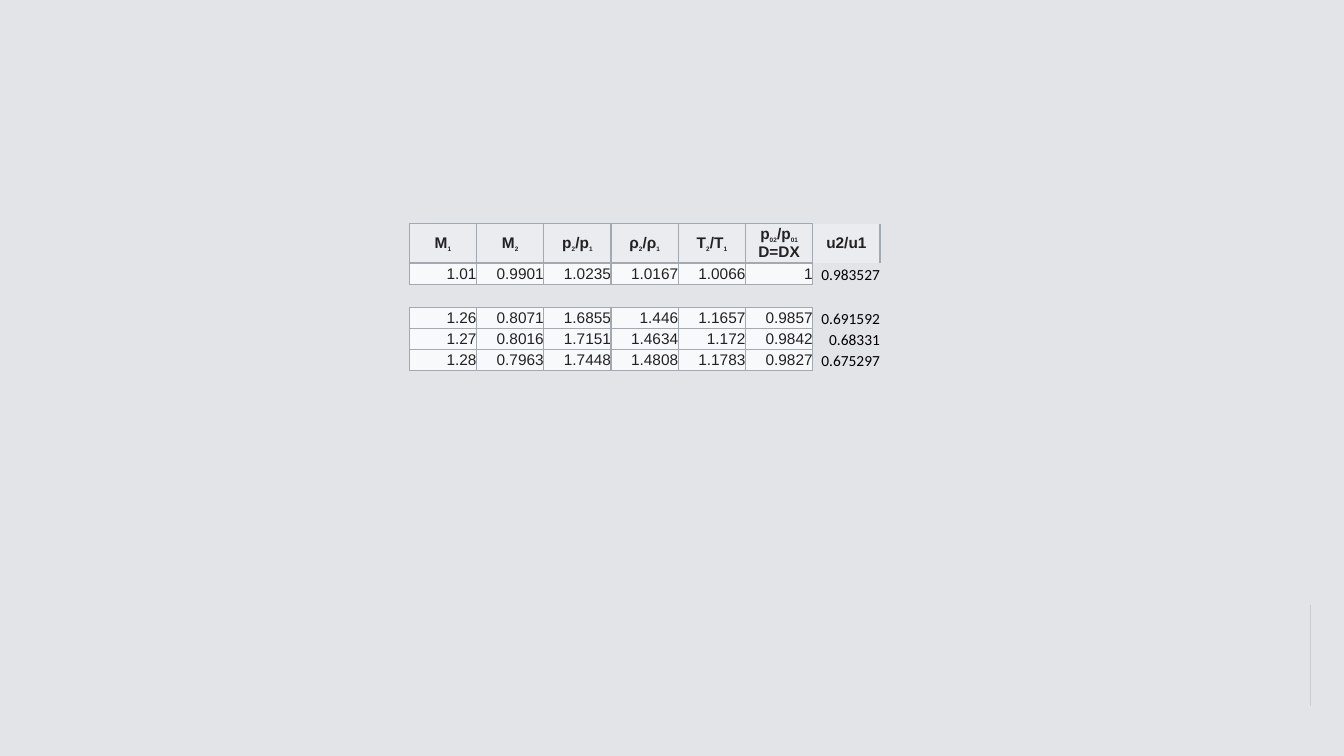
import math

from lxml import etree
from pptx import Presentation
from pptx.dml import color
from pptx.enum import text
from pptx.oxml import ns
from pptx.util import Inches, Pt

PLAIN_STYLE = "{2D5ABB26-0587-4C30-8999-92F81FD0307C}"
GRID = "A2A9B1"
HEADER = ["M|1", "M|2", "p|2|/p|1", "ρ|2|/ρ|1", "T|2|/T|1", "p|02|/p|01| D=DX", "u2/u1"]
FIRST_ROW = ["1.01", "0.9901", "1.0235", "1.0167", "1.0066", "1", "0.983527"]
LATER_ROWS = [
    ["1.26", "0.8071", "1.6855", "1.446", "1.1657", "0.9857", "0.691592"],
    ["1.27", "0.8016", "1.7151", "1.4634", "1.172", "0.9842", "0.68331"],
    ["1.28", "0.7963", "1.7448", "1.4808", "1.1783", "0.9827", "0.675297"],
]
HEAD_FORMAT = {"name": "Arial", "bold": True, "ink": "222222", "fill": "EAECF0",
               "align": text.PP_ALIGN.CENTER, "anchor": text.MSO_ANCHOR.MIDDLE, "sides": "LRTB"}
VALUE_FORMAT = {**HEAD_FORMAT, "bold": False, "fill": "F8F9FA", "align": text.PP_ALIGN.RIGHT}
RATIO_HEAD_FORMAT = {**HEAD_FORMAT, "sides": "LR"}
RATIO_FORMAT = {**VALUE_FORMAT, "name": "Calibri", "ink": "000000", "fill": None,
                "anchor": text.MSO_ANCHOR.BOTTOM, "sides": "L"}


def rgb(value):
    return color.RGBColor.from_string(value)


def paint(fill, value):
    if value is None:
        fill.background()
    else:
        fill.solid()
        fill.fore_color.rgb = rgb(value)


def add_borders(cell, sides):
    properties = cell._tc.get_or_add_tcPr()
    for side in sides:
        line = etree.SubElement(properties, ns.qn("a:ln" + side), w=str(Pt(1)))
        solid = etree.SubElement(line, ns.qn("a:solidFill"))
        etree.SubElement(solid, ns.qn("a:srgbClr"), val=GRID)


def fill_cell(cell, words, style):
    for side in ("left", "right", "top", "bottom"):
        setattr(cell, "margin_" + side, 0)
    add_borders(cell, style["sides"])
    paint(cell.fill, style["fill"])
    cell.vertical_anchor = style["anchor"]
    para = cell.text_frame.paragraphs[0]
    para.alignment = style["align"]
    for index, part in enumerate(words.split("|")):
        span = para.add_run()
        span.text = part
        subscript = index % 2 == 1
        font = {"name": style["name"], "bold": style["bold"], "size": Pt(8 if subscript else 11)}
        for name, value in font.items():
            setattr(span.font, name, value)
        span.font.color.rgb = rgb(style["ink"])
        if subscript:
            span._r.get_or_add_rPr().set("baseline", "-25000")


def add_flow_table(page, box, rows, heights, has_header):
    left, top, width = box
    columns = len(rows[0])
    frame = page.shapes.add_table(len(rows), columns, Inches(left), Inches(top),
                                  Inches(width), Inches(sum(heights)))
    table = frame.table
    table.first_row = table.horz_banding = False
    table._tbl.tblPr.find(ns.qn("a:tableStyleId")).text = PLAIN_STYLE
    for column in table.columns:
        column.width = Inches(width / columns)
    for row_index, (values, height) in enumerate(zip(rows, heights)):
        table.rows[row_index].height = Inches(height)
        heading = has_header and row_index == 0
        main, last = (HEAD_FORMAT, RATIO_HEAD_FORMAT) if heading else (VALUE_FORMAT, RATIO_FORMAT)
        for column_index, words in enumerate(values):
            style = last if column_index == columns - 1 else main
            fill_cell(table.cell(row_index, column_index), words, style)


def add_edge_half_disc(page, box):
    left, top, radius = box
    steps = 48
    points = [(left + radius * (1 - math.sin(math.pi * step / steps)),
               top + radius * (1 - math.cos(math.pi * step / steps)))
              for step in range(steps + 1)]
    outline = page.shapes.build_freeform(*points[0], scale=Inches(1))
    outline.add_line_segments(points[1:], close=True)
    disc = outline.convert_to_shape()
    disc.shadow.inherit = False
    paint(disc.fill, "262626")
    disc.line.fill.background()


def main():
    deck = Presentation()
    deck.slide_width, deck.slide_height = Inches(13.33), Inches(7.5)
    page = deck.slides.add_slide(deck.slide_layouts[6])
    paint(page.background.fill, "E2E4E8")
    add_edge_half_disc(page, (12.88, 6.32, 0.45))
    add_flow_table(page, (4.06, 3.05, 4.67), LATER_ROWS, [0.21] * 3, False)
    add_flow_table(page, (4.06, 2.22, 4.67), [HEADER, FIRST_ROW], [0.39, 0.21], True)
    deck.save("out.pptx")


if __name__ == "__main__":
    main()
